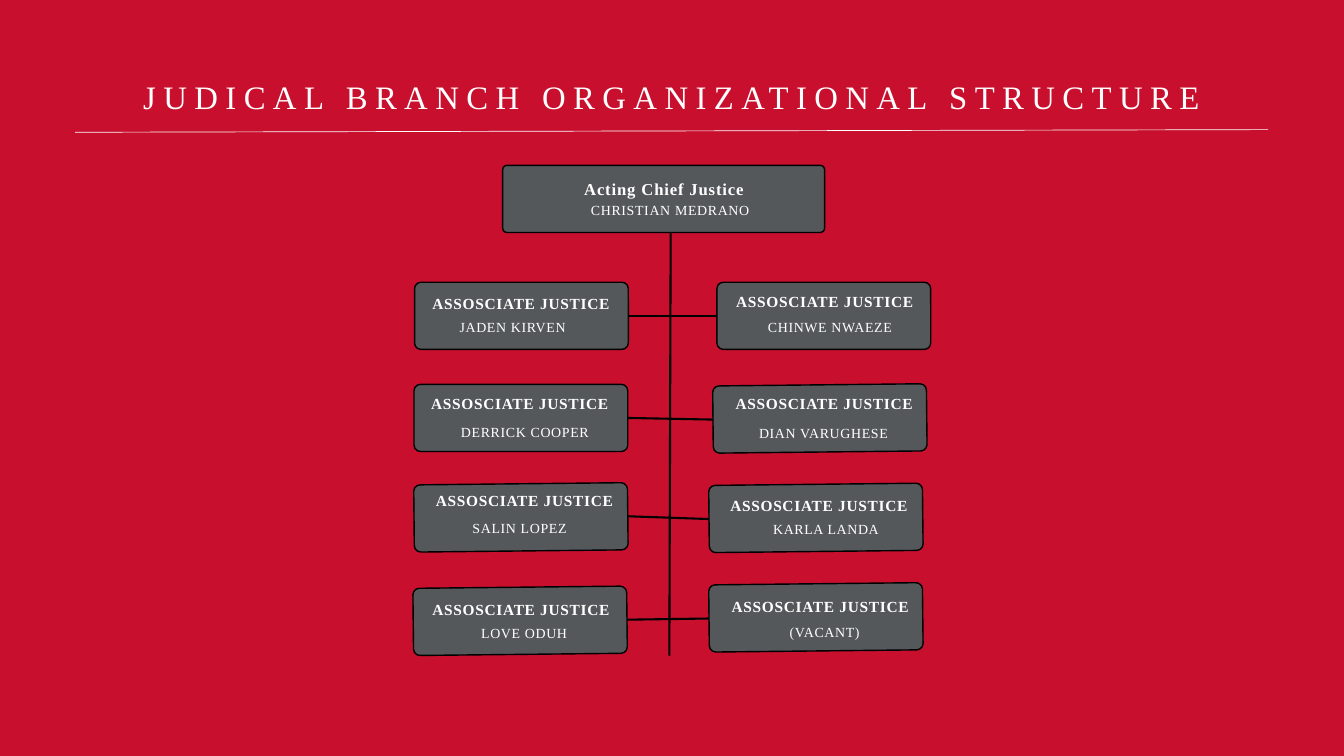
"""Build the organizational structure slide of the judicial branch."""
from dataclasses import dataclass
from math import radians, sin

from lxml import etree
from pptx import Presentation
from pptx import util as u
from pptx.dml.color import RGBColor
from pptx.enum import shapes, text
from pptx.oxml import ns

COLORS = {"background": "C8102E", "card": "54585A", "ink": "000000", "text": "FFFFFF"}
FONT = "Times New Roman"
CARD_HEIGHT = 2.54
TILT = -0.6


@dataclass(frozen=True)
class Style:
    size: float
    leading: float
    tracking: float
    height: float
    bold: bool = False


@dataclass(frozen=True)
class Member:
    name: str
    card: tuple[float, float]
    role_at: tuple[float, float]
    name_at: tuple[float, float]
    tilt: float = 0
    name_width: float = 7.98
    name_align: text.PP_ALIGN = text.PP_ALIGN.CENTER
    role: str = "ASSOSCIATE JUSTICE"
    role_width: float = 8.41
    card_width: float = 8.08
    corner: float = 0.095

    def edge(self, side: int) -> tuple[float, float]:
        """Return the middle of the left (-1) or right (1) edge of the card."""
        left, top = self.card
        half = self.card_width / 2
        return left + half + side * half, top + CARD_HEIGHT / 2 + side * half * sin(radians(self.tilt))


HEADING = Style(35.1, 49.2, 8, 1.68)
CHIEF_ROLE = Style(17.9, 25.5, 0.9, 0.86, True)
ROLE = Style(16.5, 23.4, 0.8, 0.81, True)
NAME = Style(14.9, 21.2, 0.7, 0.74)

CHIEF = Member("CHRISTIAN MEDRANO", (19, 6.25), (21.01, 6.6), (21.34, 7.52),
               role="Acting Chief Justice", role_width=8.18, card_width=12.17, corner=0.065)
PAIRS = [
    (Member("JADEN KIRVEN", (15.67, 10.67), (15.49, 11), (17.37, 11.91),
            name_align=text.PP_ALIGN.JUSTIFY),
     Member("CHINWE NWAEZE", (27.1, 10.67), (26.97, 10.92), (27.38, 11.91))),
    (Member("DERRICK COOPER", (15.65, 14.53), (15.44, 14.78), (15.85, 15.88)),
     Member("DIAN VARUGHESE", (26.95, 14.55), (26.95, 14.78), (27.38, 15.95), TILT, 7.49)),
    (Member("SALIN LOPEZ", (15.65, 18.29), (15.62, 18.44), (15.65, 19.53), TILT),
     Member("KARLA LANDA", (26.8, 18.31), (26.75, 18.64), (27.23, 19.58), TILT)),
    (Member("LOVE ODUH", (15.62, 22.2), (15.49, 22.56), (15.82, 23.5), TILT),
     Member("(VACANT)", (26.8, 22.07), (26.8, 22.43), (27.18, 23.44), TILT)),
]


def color(key: str) -> RGBColor:
    return RGBColor.from_string(COLORS[key])


def write(holder, words: str, style: Style, align=text.PP_ALIGN.CENTER) -> None:
    frame = holder.text_frame
    frame.text = words
    frame.word_wrap = True
    frame.auto_size = text.MSO_AUTO_SIZE.SHAPE_TO_FIT_TEXT
    frame.vertical_anchor = text.MSO_ANCHOR.TOP
    frame.margin_left = frame.margin_top = frame.margin_right = frame.margin_bottom = 0
    paragraph = frame.paragraphs[0]
    paragraph.alignment = align
    paragraph.line_spacing = u.Pt(style.leading)
    paragraph.space_before = u.Pt(0)
    run = paragraph.runs[0]
    run.font.name = FONT
    run.font.size = u.Pt(style.size)
    run.font.bold = style.bold
    run.font.color.rgb = color("text")
    run._r.get_or_add_rPr().set("spc", str(round(style.tracking * 100)))


def add_label(slide, words: str, at: tuple[float, float], width: float, style: Style,
              align=text.PP_ALIGN.CENTER) -> None:
    label = slide.shapes.add_textbox(*map(u.Cm, (*at, width, style.height)))
    write(label, words, style, align)


def add_line(slide, start: tuple[float, float], end: tuple[float, float],
             ink: str = "ink", weight: float = 2.25) -> None:
    line = slide.shapes.add_connector(shapes.MSO_CONNECTOR.STRAIGHT, *map(u.Cm, (*start, *end)))
    line.line.color.rgb = color(ink)
    line.line.width = u.Pt(weight)
    etree.SubElement(line._element.spPr, ns.qn("a:effectLst"))


def add_member(slide, member: Member, role_style: Style = ROLE) -> None:
    card = slide.shapes.add_shape(shapes.MSO_SHAPE.ROUNDED_RECTANGLE,
                                  *map(u.Cm, (*member.card, member.card_width, CARD_HEIGHT)))
    card.adjustments[0] = member.corner
    card.rotation = member.tilt
    card.shadow.inherit = False
    card.fill.solid()
    card.fill.fore_color.rgb = color("card")
    card.line.color.rgb = color("ink")
    card.line.width = u.Pt(1.5)
    add_label(slide, member.role, member.role_at, member.role_width, role_style)
    add_label(slide, member.name, member.name_at, member.name_width, NAME, member.name_align)


def main() -> None:
    deck = Presentation()
    deck.slide_width, deck.slide_height = u.Cm(50.8), u.Cm(28.58)
    slide = deck.slides.add_slide(deck.slide_layouts[5])
    slide.background.fill.solid()
    slide.background.fill.fore_color.rgb = color("background")

    heading = slide.shapes.title
    heading.left, heading.top = u.Cm(2.06), u.Cm(2.64)
    heading.width, heading.height = u.Cm(46.69), u.Cm(HEADING.height)
    write(heading, "JUDICAL BRANCH ORGANIZATIONAL STRUCTURE", HEADING)
    add_line(slide, (2.84, 5), (47.93, 4.9), "text", 0.75)

    add_member(slide, CHIEF, CHIEF_ROLE)
    add_line(slide, (25.3, 24.79), (25.35, 8.79))
    for left, right in PAIRS:
        add_line(slide, right.edge(-1), left.edge(1))
        add_member(slide, left)
        add_member(slide, right)

    deck.save("out.pptx")


if __name__ == "__main__":
    main()
